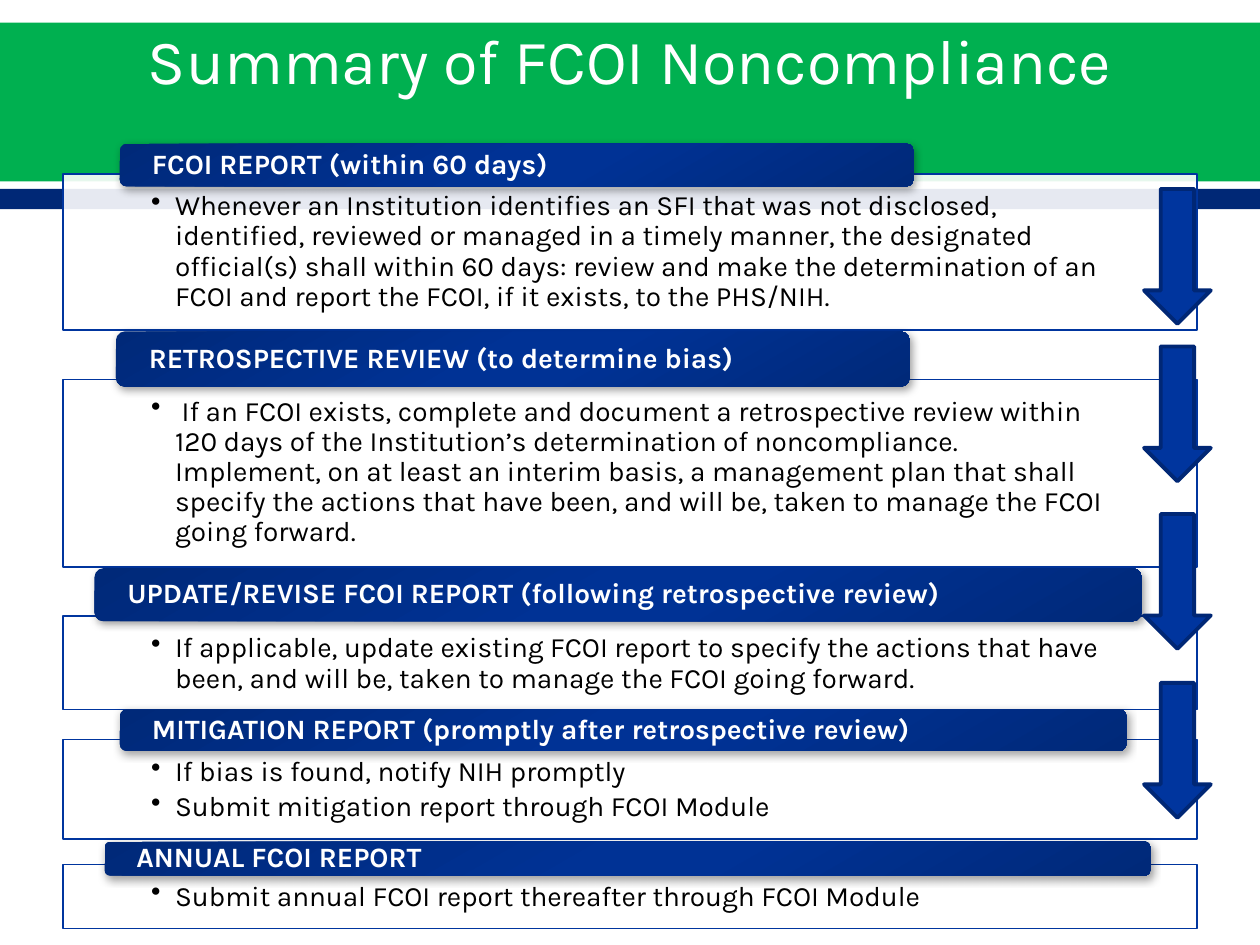
from lxml import etree
from pptx import Presentation, util as u
from pptx.dml.color import RGBColor
from pptx.enum import shapes, text
from pptx.oxml import parse_xml
from pptx.oxml.ns import nsdecls, qn

COLORS = {"white": "FFFFFF", "black": "000000", "green": "00B050", "navy": "002876",
          "blue": "00359E", "edge": "002775", "bar_dark": "002979", "bar_light": "003295"}
FONT = "Karla"
COLUMNS, ROWS = 100, 75

# heading, bar (left, top, width, height), panel (top, height), bullets
STAGES = [
    ("FCOI REPORT (within 60 days)", (9.5, 11.4, 63, 3.4), (13.8, 12.4),
     ["Whenever an Institution identifies an SFI that was not disclosed, identified, reviewed or "
      "managed in a timely manner, the designated official(s) shall within 60 days: review and make "
      "the determination of an FCOI and report the FCOI, if it exists, to the PHS/NIH."]),
    ("RETROSPECTIVE REVIEW (to determine bias)", (9.2, 26.3, 63, 4.4), (30.1, 14.9),
     [" If an FCOI exists, complete and document a retrospective review within 120 days of the "
      "Institution’s determination of noncompliance. Implement, on at least an interim basis, a "
      "management plan that shall specify the actions that have been, and will be, taken to manage "
      "the FCOI going forward."]),
    ("UPDATE/REVISE FCOI REPORT (following retrospective review)", (7.5, 45.1, 83.1, 4.2), (48.9, 7.4),
     ["If applicable, update existing FCOI report to specify the actions that have been, and will "
      "be, taken to manage the FCOI going forward."]),
    ("MITIGATION REPORT (promptly after retrospective review)", (9.5, 56.3, 79.9, 3.3), (58.7, 7.9),
     ["If bias is found, notify NIH promptly", "Submit mitigation report through FCOI Module"]),
    ("ANNUAL FCOI REPORT", (8.3, 66.8, 83, 2.7), (68.6, 5.1),
     ["Submit annual FCOI report thereafter through FCOI Module"]),
]
ARROW_TOPS = (15, 27.5, 40.8, 54.2)


class Deck:
    """Holds the style and the current slide; places everything in grid columns and rows."""

    def __init__(self):
        self.prs = Presentation()
        self.prs.slide_width, self.prs.slide_height = u.Inches(10), u.Inches(7.5)
        self.slide = self.prs.slides.add_slide(self.prs.slide_layouts[6])

    def cells(self, left, top, width, height):
        column = self.prs.slide_width / COLUMNS
        row = self.prs.slide_height / ROWS
        return [round(n) for n in (left * column, top * row, width * column, height * row)]

    def block(self, kind, area, fill, line=None, weight=0.79):
        shape = self.slide.shapes.add_shape(kind, *self.cells(*area))
        shape.shadow.inherit = False
        shape.fill.solid()
        shape.fill.fore_color.rgb = RGBColor.from_string(COLORS[fill])
        if line:
            shape.line.color.rgb = RGBColor.from_string(COLORS[line])
            shape.line.width = u.Pt(weight)
        else:
            shape.line.fill.background()
        return shape

    def set_text(self, shape, lines, size, color, anchor, align=text.PP_ALIGN.LEFT,
                 bold=False, insets=(0.1, 0.05, 0.1, 0.05)):
        frame = shape.text_frame
        frame.word_wrap = True
        frame.vertical_anchor = anchor
        (frame.margin_left, frame.margin_top,
         frame.margin_right, frame.margin_bottom) = map(u.Inches, insets)
        frame.text = "\n".join(lines)
        for paragraph in frame.paragraphs:
            paragraph.alignment = align
            for run in paragraph.runs:
                run.font.name, run.font.size, run.font.bold = FONT, u.Pt(size), bold
                run.font.color.rgb = RGBColor.from_string(COLORS[color])
        return frame

    def title(self, words, area):
        box = self.slide.shapes.add_textbox(*self.cells(*area))
        self.set_text(box, [words], 36, "white", text.MSO_ANCHOR.MIDDLE, text.PP_ALIGN.CENTER)

    def panel(self, area, bullets):
        shape = self.block(shapes.MSO_SHAPE.RECTANGLE, area, "white", "blue")
        color = shape._element.spPr.find(qn("a:solidFill"))[0]
        etree.SubElement(color, qn("a:alpha"), val="90000")
        frame = self.set_text(shape, bullets, 16, "black", text.MSO_ANCHOR.TOP,
                              insets=(0.7, 0.14, 0.7, 0.12))
        for paragraph in frame.paragraphs:
            paragraph.line_spacing = 0.9
            paragraph.space_after = u.Pt(3)
            props = paragraph._p.get_or_add_pPr()
            props.set("marL", str(u.Inches(0.19)))
            props.set("indent", str(-u.Inches(0.19)))
            etree.SubElement(props, qn("a:buChar"), char="•")

    def bar(self, area, heading):
        shape = self.block(shapes.MSO_SHAPE.ROUNDED_RECTANGLE, area, "bar_light")
        stops = "".join(f'<a:gs pos="{share * 1000}"><a:srgbClr val="{COLORS[name]}"/></a:gs>'
                        for share, name in ((0, "bar_dark"), (48, "bar_light"),
                                            (58, "bar_light"), (100, "bar_dark")))
        props = shape._element.spPr
        props.replace(props.find(qn("a:solidFill")), parse_xml(
            f'<a:gradFill {nsdecls("a")} rotWithShape="1"><a:gsLst>{stops}</a:gsLst>'
            '<a:lin ang="3600000" scaled="0"/></a:gradFill>'))
        props.find(qn("a:effectLst")).append(parse_xml(
            f'<a:outerShdw {nsdecls("a")} blurRad="{u.Pt(5)}" dist="{u.Pt(2)}" dir="3600000" '
            f'rotWithShape="0"><a:srgbClr val="{COLORS["black"]}"><a:alpha val="36000"/>'
            '</a:srgbClr></a:outerShdw>'))
        frame = self.set_text(shape, [heading], 16, "white", text.MSO_ANCHOR.MIDDLE,
                              bold=True, insets=(0.24, 0, 0.24, 0))
        frame.paragraphs[0].line_spacing = 0.9

    def arrow(self, area):
        self.block(shapes.MSO_SHAPE.DOWN_ARROW, area, "blue", "edge", 2.22)


def main():
    deck = Deck()
    deck.block(shapes.MSO_SHAPE.RECTANGLE, (0, 1.8, COLUMNS, 12.6), "green")
    deck.block(shapes.MSO_SHAPE.RECTANGLE, (0, 15, COLUMNS, 1.6), "navy")
    for heading, bar_area, (top, height), bullets in STAGES:
        deck.panel((5, top, 90, height), bullets)
        deck.bar(bar_area, heading)
    for top in ARROW_TOPS:
        deck.arrow((90.8, top, 5.3, 10.7))
    deck.title("Summary of FCOI Noncompliance", (5, 2, 90, 5.4))
    deck.prs.save("out.pptx")


if __name__ == "__main__":
    main()
